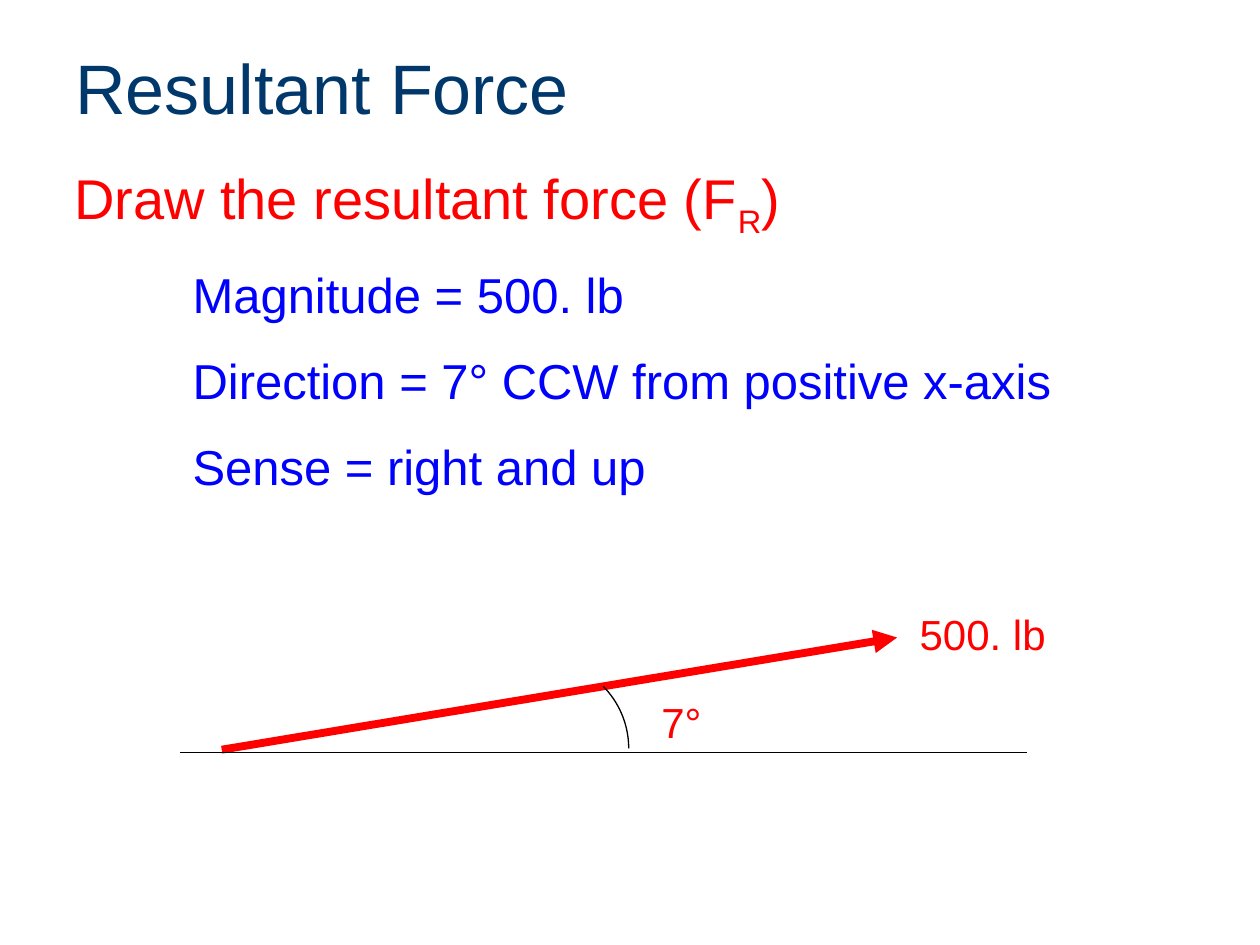
"""Build the resultant force slide: its description and a vector diagram."""
from math import cos, radians, sin

from lxml.etree import SubElement
from pptx import Presentation
from pptx.dml.color import RGBColor
from pptx.enum.shapes import MSO_CONNECTOR
from pptx.enum.text import MSO_ANCHOR
from pptx.oxml.ns import qn
from pptx.util import Inches, Pt

NAVY = RGBColor(0x00, 0x38, 0x6B)
RED = RGBColor(0xFF, 0x00, 0x00)
BLUE = RGBColor(0x00, 0x00, 0xFF)
BLACK = RGBColor(0x00, 0x00, 0x00)

prs = Presentation()
prs.slide_width, prs.slide_height = Inches(10), Inches(7.5)
COL, ROW = prs.slide_width / 100, prs.slide_height / 75
s = prs.slides.add_slide(prs.slide_layouts[6])


def add_text(col, row, cols, rows, lines, size, color, before=0, wrap=True):
    sp = s.shapes.add_textbox(int(col * COL), int(row * ROW), int(cols * COL), int(rows * ROW))
    tf = sp.text_frame
    tf.word_wrap = wrap
    tf.text = "\n".join(lines)
    for p in tf.paragraphs:
        p.space_before = Pt(before)
        p.font.name, p.font.size = "Arial", Pt(size)
        for r in p.runs:
            r.font.name, r.font.size = "Arial", Pt(size)
            r.font.color.rgb = color
    return tf


def add_line(col1, row1, col2, row2, color, width):
    sp = s.shapes.add_connector(MSO_CONNECTOR.STRAIGHT, int(col1 * COL), int(row1 * ROW),
                                int(col2 * COL), int(row2 * ROW))
    sp.line.color.rgb, sp.line.width = color, Pt(width)
    SubElement(sp._element.spPr, qn("a:effectLst"))
    return sp


tf = add_text(5, 3, 90, 7.8, ["Resultant Force"], 40, NAVY)
tf.vertical_anchor = MSO_ANCHOR.MIDDLE

tf = add_text(4.9, 12.5, 79.8, 8.3, ["Draw the resultant force (F"], 32, RED, before=6.4)
p = tf.paragraphs[0]
for text, base in (("R", "-25000"), (")", "0")):
    r = p.add_run()
    r.text = text
    r.font.name, r.font.size = "Arial", Pt(32)
    r.font.color.rgb = RED
    r.font._element.set("baseline", base)

facts = ["Magnitude = 500. lb", "Direction = 7° CCW from positive x-axis", "Sense = right and up"]
add_text(14.3, 20.5, 70.8, 19.9, facts, 28, BLUE, before=15.5)

force = add_line(17.6, 59.5, 71.2, 50.6, RED, 4.5)
SubElement(force.line._get_or_add_ln(), qn("a:tailEnd"), type="triangle")
add_line(14.3, 59.7, 81.5, 59.7, BLACK, 0.75)
add_text(51.5, 54.8, 9.7, 5, ["7°"], 24, RED)

center_col, center_row, radius, sweep, steps = 42.9, 59.4, 7, 44.5, 24
angles = [radians(sweep * (1 - i / steps)) for i in range(steps + 1)]
points = [((center_col + radius * cos(a)) * COL, (center_row - radius * sin(a)) * ROW)
          for a in angles]
fb = s.shapes.build_freeform(center_col * COL, center_row * ROW)
fb.move_to(*points[0])
fb.add_line_segments(points[1:], close=False)
sp = fb.convert_to_shape()
sp.shadow.inherit = False
sp.fill.background()
sp.line.color.rgb, sp.line.width = BLACK, Pt(0.75)

add_text(72, 47.8, 12.1, 5, ["500. lb"], 24, RED, before=12, wrap=False)

prs.save("out.pptx")
